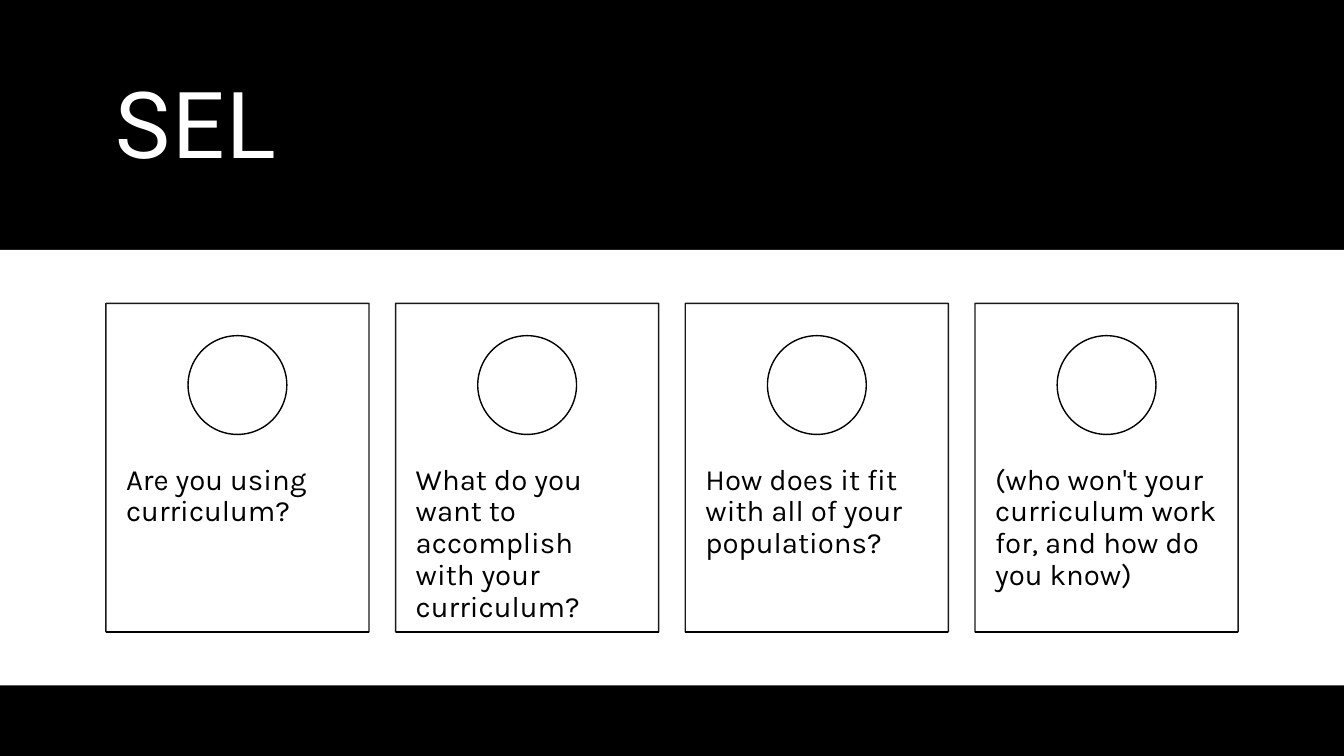
from lxml import etree
from pptx import Presentation
from pptx.dml.color import RGBColor
from pptx.enum.shapes import MSO_CONNECTOR as CONN, MSO_SHAPE as SHAPE
from pptx.enum.text import MSO_ANCHOR as ANCHOR, MSO_AUTO_SIZE as FIT, PP_ALIGN as ALIGN
from pptx.oxml.ns import qn
from pptx.util import Inches, Pt

WIDTH, HEIGHT = 13.33, 7.5
LEFT, RIGHT = 1.05, 12.28
CARD_TOP, CARD_W, CARD_H = 3.01, 2.61, 3.26
CIRCLE = 0.98
QUESTIONS = [
    "Are you using curriculum?",
    "What do you want to accomplish with your curriculum?",
    "How does it fit with all of your populations?",
    "(who won't your curriculum work for, and how do you know)",
]


def color(value):
    return RGBColor.from_string(value)


def set_opacity(element, percent):
    """Give every solid colour inside the element this opacity."""
    for clr in element.iter(qn("a:srgbClr")):
        etree.SubElement(clr, qn("a:alpha")).set("val", str(percent * 1000))


class Deck:
    """The slide and its black and white style."""

    black, white = "000000", "FFFFFF"
    title_font, body_font = "Roboto", "Karla"

    def __init__(self, prs):
        self.s = prs.slides.add_slide(prs.slide_layouts[5])
        fill = self.s.background.fill
        fill.solid()
        fill.fore_color.rgb = color(self.black)

    def format_text(self, tf, font, size, hex_color):
        tf.word_wrap = True
        tf.auto_size = FIT.NONE
        p = tf.paragraphs[0]
        p.alignment = ALIGN.LEFT
        p.line_spacing = 0.9
        r = p.runs[0]
        r.font.name, r.font.size = font, Pt(size)
        r.font.color.rgb = color(hex_color)
        return r

    def title(self, text, x, y, w, h):
        sp = self.s.shapes.title
        sp.left, sp.top, sp.width, sp.height = map(Inches, (x, y, w, h))
        tf = sp.text_frame
        tf.text = text
        tf.vertical_anchor = ANCHOR.MIDDLE
        r = self.format_text(tf, self.title_font, 66, self.white)
        r.font._element.set("spc", "120")

    def shape(self, kind, x, y, w, h, outlined=True):
        sp = self.s.shapes.add_shape(kind, *map(Inches, (x, y, w, h)))
        sp.shadow.inherit = False
        sp.fill.solid()
        sp.fill.fore_color.rgb = color(self.white)
        if outlined:
            sp.line.color.rgb = color(self.black)
            sp.line.width = Pt(1)
        else:
            sp.line.fill.background()
        return sp

    def text(self, text, x, y, w, h):
        tf = self.s.shapes.add_textbox(*map(Inches, (x, y, w, h))).text_frame
        tf.text = text
        tf.margin_left = tf.margin_right = Inches(0.2)
        tf.margin_top = tf.margin_bottom = Inches(0.36)
        self.format_text(tf, self.body_font, 21, self.black)

    def rule(self, x, y, w):
        line = self.s.shapes.add_connector(
            CONN.STRAIGHT, *map(Inches, (x, y, x + w, y)))
        line.line.color.rgb = color(self.black)
        line.line.width = Pt(1)
        etree.SubElement(line._element.spPr, qn("a:effectLst"))

    def card(self, text, x):
        box = self.shape(SHAPE.RECTANGLE, x, CARD_TOP, CARD_W, CARD_H)
        set_opacity(box._element.spPr, 90)
        self.text(text, x, 4.25, CARD_W, 1.96)
        self.shape(SHAPE.OVAL, x + (CARD_W - CIRCLE) / 2, 3.33, CIRCLE, CIRCLE)
        self.rule(x, CARD_TOP + CARD_H, CARD_W)


def main():
    prs = Presentation()
    prs.slide_width, prs.slide_height = Inches(WIDTH), Inches(HEIGHT)
    deck = Deck(prs)
    deck.title("SEL", LEFT, 0.35, RIGHT - LEFT, 1.86)
    deck.shape(SHAPE.RECTANGLE, 0, 2.48, WIDTH, 4.32, outlined=False)
    pitch = (RIGHT - LEFT - CARD_W) / (len(QUESTIONS) - 1)
    for i, question in enumerate(QUESTIONS):
        deck.card(question, LEFT + i * pitch)
    prs.save("out.pptx")


if __name__ == "__main__":
    main()
